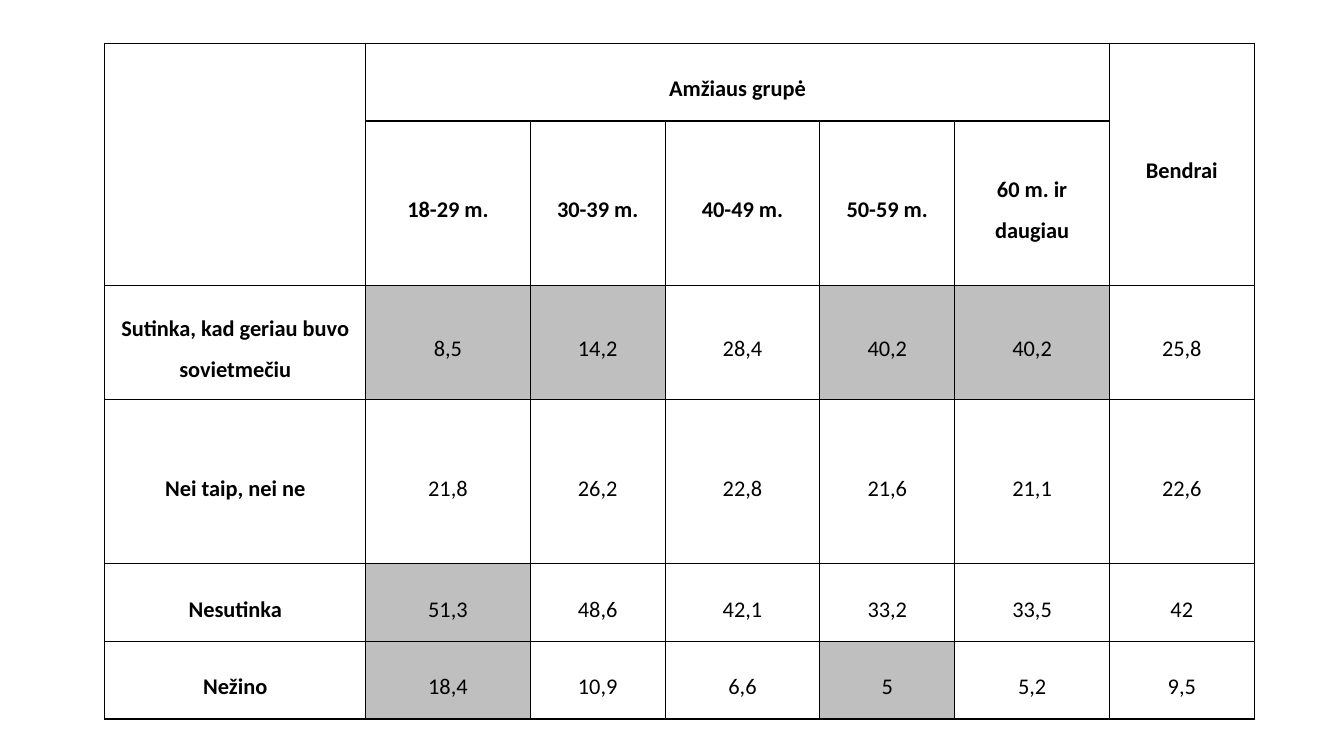
from lxml import etree
from pptx import Presentation
from pptx.dml.color import RGBColor
from pptx.enum.text import MSO_ANCHOR, PP_ALIGN
from pptx.oxml.ns import qn
from pptx.util import Pt

MIDDLE = MSO_ANCHOR.MIDDLE
CENTER = PP_ALIGN.CENTER

COLORS = {"ink": "000000", "highlight": "BFBFBF"}

COLUMN_WIDTHS = [186.5, 117.4, 96.5, 110.4, 96.5, 110.4, 103.5]
ROW_HEIGHTS = [55.5, 117.4, 81.4, 117.4, 55.5, 55.5]
HEADER_ROWS = 2

ANSWERS = [
    ["", "Amžiaus grupė", "", "", "", "", "Bendrai"],
    ["", "18-29 m.", "30-39 m.", "40-49 m.", "50-59 m.", "60 m. ir daugiau", ""],
    ["Sutinka, kad geriau buvo sovietmečiu", "8,5", "14,2", "28,4", "40,2", "40,2", "25,8"],
    ["Nei taip, nei ne", "21,8", "26,2", "22,8", "21,6", "21,1", "22,6"],
    ["Nesutinka", "51,3", "48,6", "42,1", "33,2", "33,5", "42"],
    ["Nežino", "18,4", "10,9", "6,6", "5", "5,2", "9,5"],
]
MERGES = [((0, 0), (1, 0)), ((0, 1), (0, 5)), ((0, 6), (1, 6))]
HIGHLIGHTED = {(2, 1), (2, 2), (2, 4), (2, 5), (4, 1), (5, 1), (5, 4)}


class SurveySlide:
    """Holds the style and the current slide, and draws the survey table."""

    font_name = "Calibri"
    font_size = 16
    line_spacing = 1.5
    side_margin = 5
    border_width = 1

    def __init__(self, slide):
        self.slide = slide

    def table(self, left, top, texts, widths, heights, merges, highlighted):
        frame = self.slide.shapes.add_table(
            len(heights), len(widths), Pt(left), Pt(top), Pt(sum(widths)), Pt(sum(heights))
        )
        table = frame.table
        table.first_row = False
        table.horz_banding = False
        for column, width in zip(table.columns, widths):
            column.width = Pt(width)
        for row, height in zip(table.rows, heights):
            row.height = Pt(height)
        for r, row_texts in enumerate(texts):
            for c, text in enumerate(row_texts):
                bold = r < HEADER_ROWS or c == 0
                self.cell(table.cell(r, c), text, bold, (r, c) in highlighted)
        for first, last in merges:
            table.cell(*first).merge(table.cell(*last))

    def cell(self, cell, text, bold, highlighted):
        cell.margin_left = cell.margin_right = Pt(self.side_margin)
        cell.margin_top = cell.margin_bottom = 0
        cell.vertical_anchor = MIDDLE
        self.borders(cell)
        if highlighted:
            cell.fill.solid()
            cell.fill.fore_color.rgb = RGBColor.from_string(COLORS["highlight"])
        else:
            cell.fill.background()
        cell.text = text
        paragraph = cell.text_frame.paragraphs[0]
        paragraph.alignment = CENTER
        paragraph.line_spacing = self.line_spacing
        font = paragraph.font
        font.name = self.font_name
        font.size = Pt(self.font_size)
        font.bold = bold
        font.color.rgb = RGBColor.from_string(COLORS["ink"])

    def borders(self, cell):
        properties = cell._tc.get_or_add_tcPr()
        for side in ("a:lnL", "a:lnR", "a:lnT", "a:lnB"):
            line = etree.SubElement(properties, qn(side), w=str(Pt(self.border_width)))
            fill = etree.SubElement(line, qn("a:solidFill"))
            etree.SubElement(fill, qn("a:srgbClr"), val=COLORS["ink"])


def main():
    deck = Presentation()
    deck.slide_width = Pt(960)
    deck.slide_height = Pt(540)
    survey = SurveySlide(deck.slides.add_slide(deck.slide_layouts[6]))
    survey.table(74.8, 31, ANSWERS, COLUMN_WIDTHS, ROW_HEIGHTS, MERGES, HIGHLIGHTED)
    deck.save("out.pptx")


if __name__ == "__main__":
    main()
